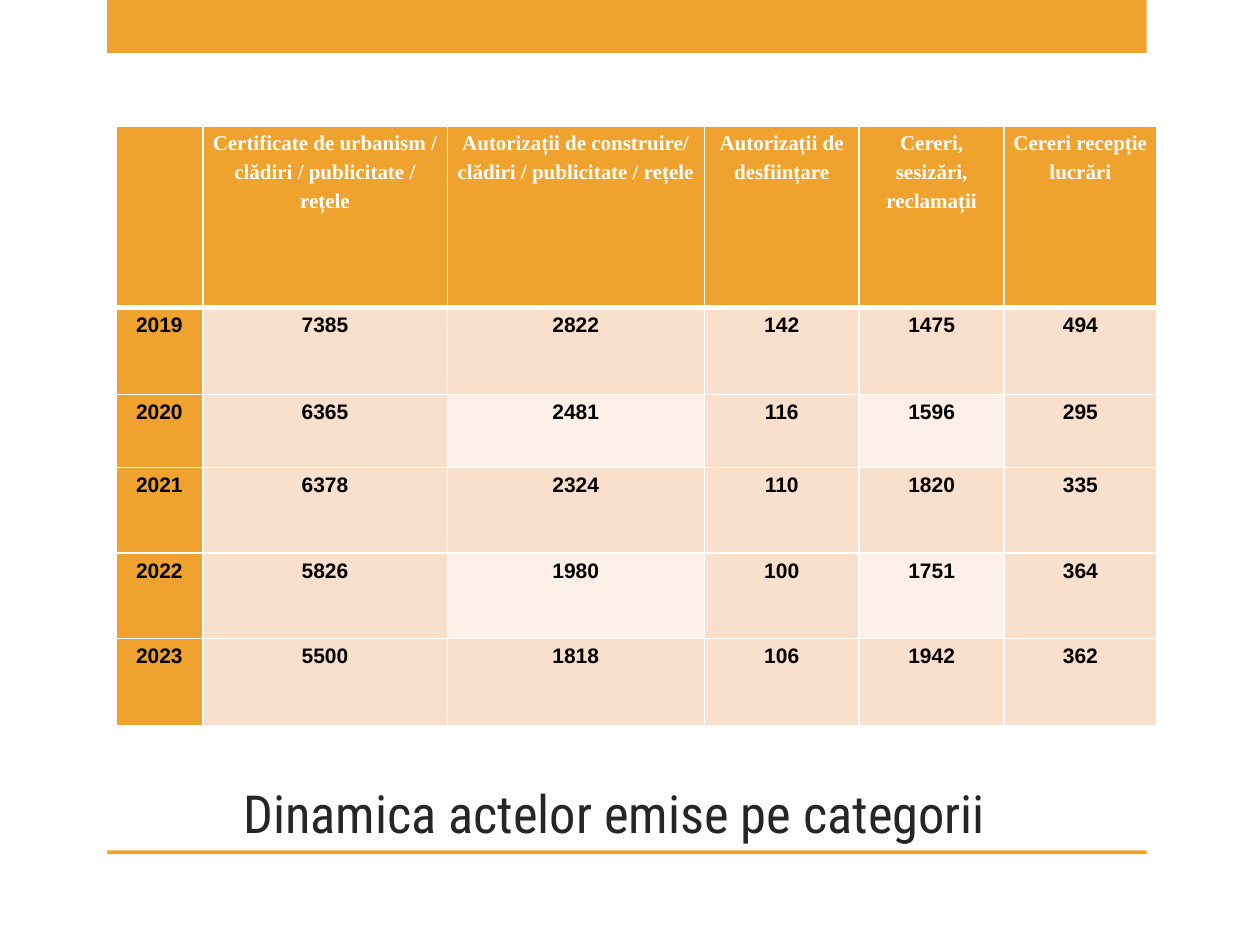
from lxml.etree import SubElement
from pptx import Presentation
from pptx.dml.color import RGBColor
from pptx.enum.shapes import MSO_SHAPE
from pptx.enum.text import MSO_ANCHOR, PP_ALIGN
from pptx.oxml.ns import qn
from pptx.util import Inches, Pt

ORANGE = RGBColor(0xF0, 0xA2, 0x2E)
PEACH = RGBColor(0xF9, 0xE0, 0xCD)
CREAM = RGBColor(0xFC, 0xF0, 0xE8)
WHITE = RGBColor(0xFF, 0xFF, 0xFF)
BLACK = RGBColor(0, 0, 0)
CHARCOAL = RGBColor(0x26, 0x26, 0x26)

TITLE_FONT = {"name": "Roboto Condensed", "size": Pt(30), "bold": False}
HEADER_FONT = {"name": "Times New Roman", "size": Pt(12), "bold": True}
BODY_FONT = {"name": "Arial", "size": Pt(12), "bold": True}
CELL_FORMAT = {"alignment": PP_ALIGN.CENTER, "line_spacing": 1.25, "space_after": Pt(9)}
CELL_MARGINS = {
    "margin_left": Inches(0.07),
    "margin_right": Inches(0.07),
    "margin_top": 0,
    "margin_bottom": 0,
}

COLUMN_WIDTHS = [0.69, 1.94, 2.04, 1.23, 1.15, 1.21]
ROW_HEIGHTS = [1.44, 0.69, 0.58, 0.68, 0.68, 0.69]
ROWS = [
    [
        "",
        "Certificate de urbanism / clădiri / publicitate / rețele",
        "Autorizații de construire/ clădiri / publicitate / rețele",
        "Autorizații de desființare",
        "Cereri, sesizări, reclamații",
        "Cereri recepție lucrări",
    ],
    ["2019", "7385", "2822", "142", "1475", "494"],
    ["2020", "6365", "2481", "116", "1596", "295"],
    ["2021", "6378", "2324", "110", "1820", "335"],
    ["2022", "5826", "1980", "100", "1751", "364"],
    ["2023", "5500", "1818", "106", "1942", "362"],
]


def apply_format(target, values):
    for name, value in values.items():
        setattr(target, name, value)


class SlideBuilder:
    def __init__(self, slide, accent):
        self.slide = slide
        self.accent = accent

    def bar(self, left, top, width, height):
        shape = self.slide.shapes.add_shape(
            MSO_SHAPE.RECTANGLE, Inches(left), Inches(top), Inches(width), Inches(height)
        )
        shape.shadow.inherit = False
        shape.fill.solid()
        shape.fill.fore_color.rgb = self.accent
        shape.line.fill.background()

    def title(self, text, left, top, width, height):
        shape = self.slide.shapes.add_textbox(
            Inches(left), Inches(top), Inches(width), Inches(height)
        )
        frame = shape.text_frame
        apply_format(frame, {
            "word_wrap": True,
            "vertical_anchor": MSO_ANCHOR.BOTTOM,
            "margin_left": Inches(1.1),
        })
        self.styled_run(frame.paragraphs[0], text, TITLE_FONT, CHARCOAL)

    def styled_run(self, paragraph, text, font, color):
        run = paragraph.add_run()
        run.text = text
        apply_format(run.font, font)
        run.font.color.rgb = color

    def border(self, cell, side, points):
        properties = cell._tc.get_or_add_tcPr()
        line = SubElement(properties, qn(f"a:ln{side}"), w=str(Pt(points)))
        fill = SubElement(line, qn("a:solidFill"))
        SubElement(fill, qn("a:srgbClr"), val=str(WHITE))

    def cell_fill(self, row, column):
        if row == 0 or column == 0:
            return self.accent
        return CREAM if row % 2 == 0 and column in (2, 4) else PEACH

    def cell(self, cell, row, column, text):
        for side in "LRTB":
            below_header = (row, side) in ((0, "B"), (1, "T"))
            self.border(cell, side, 3 if below_header else 1)
        cell.fill.solid()
        cell.fill.fore_color.rgb = self.cell_fill(row, column)
        apply_format(cell, CELL_MARGINS)
        paragraph = cell.text_frame.paragraphs[0]
        apply_format(paragraph, CELL_FORMAT)
        if text:
            font, color = (BODY_FONT, BLACK) if row else (HEADER_FONT, WHITE)
            self.styled_run(paragraph, text, font, color)

    def table(self, rows, left, top):
        table = self.slide.shapes.add_table(
            len(rows), len(rows[0]), Inches(left), Inches(top),
            Inches(sum(COLUMN_WIDTHS)), Inches(sum(ROW_HEIGHTS)),
        ).table
        for column, width in zip(table.columns, COLUMN_WIDTHS):
            column.width = Inches(width)
        for row, height in zip(table.rows, ROW_HEIGHTS):
            row.height = Inches(height)
        for row, texts in enumerate(rows):
            for column, text in enumerate(texts):
                self.cell(table.cell(row, column), row, column, text)


def main():
    presentation = Presentation()
    presentation.slide_width = Inches(10)
    presentation.slide_height = Inches(7.5)
    slide = presentation.slides.add_slide(presentation.slide_layouts[6])
    builder = SlideBuilder(slide, ORANGE)
    builder.bar(0.85, 0, 8.25, 0.42)
    builder.bar(0.85, 6.75, 8.25, 0.03)
    builder.title("Dinamica actelor emise pe categorii", 0.83, 6, 8.25, 0.75)
    builder.table(ROWS, 0.92, 1)
    presentation.save("out.pptx")


if __name__ == "__main__":
    main()
